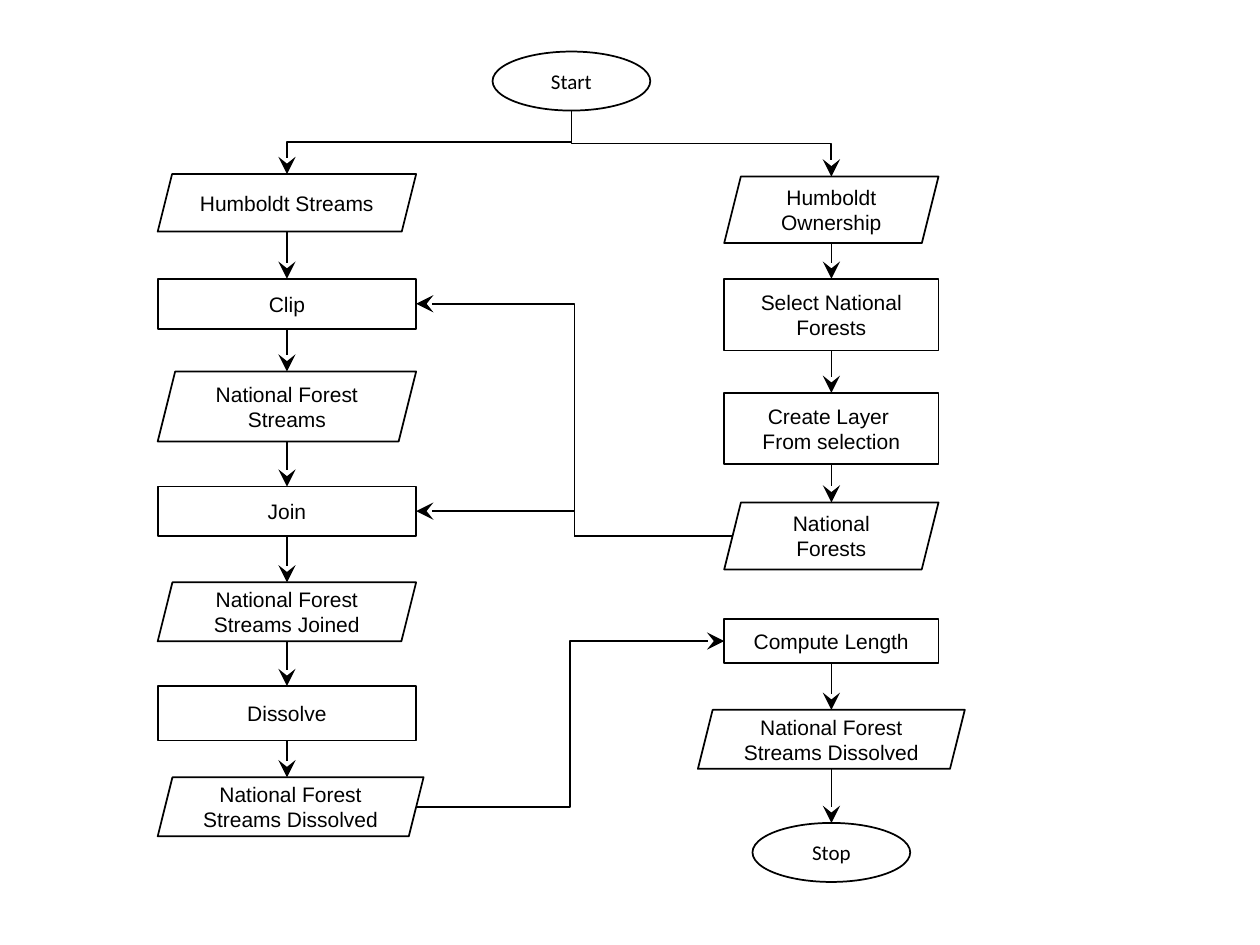
from dataclasses import dataclass

import pptx
import pptx.dml.color
import pptx.enum.shapes
import pptx.enum.text
import pptx.util
from lxml import etree
from pptx.oxml.ns import qn

Cm = pptx.util.Cm
Kind = pptx.enum.shapes.MSO_SHAPE
Link = pptx.enum.shapes.MSO_CONNECTOR
TOP, LEFT, BOTTOM = 0, 1, 2


@dataclass(frozen=True)
class Theme:
    ink: str = "000000"
    paper: str = "FFFFFF"
    font: str = "Arial"
    cap_font: str = "Calibri"
    size: int = 12
    line: int = 1


def tint(code):
    return pptx.dml.color.RGBColor.from_string(code)


def write(frame, text, *, font, size, color):
    """Fill a text frame with centred lines."""
    frame.word_wrap = True
    frame.vertical_anchor = pptx.enum.text.MSO_ANCHOR.MIDDLE
    frame.text = text
    for para in frame.paragraphs:
        para.alignment = pptx.enum.text.PP_ALIGN.CENTER
        para.font.name = font
        para.font.size = pptx.util.Pt(size)
        para.font.color.rgb = tint(color)


def middle(shape, side):
    """Point at the middle of a side; slanted sides sit inside the frame."""
    if side in (TOP, BOTTOM):
        down = shape.height if side == BOTTOM else 0
        return shape.left + shape.width // 2, shape.top + down
    slant = shape.height // 8 if shape.auto_shape_type == Kind.PARALLELOGRAM else 0
    across = slant if side == LEFT else shape.width - slant
    return shape.left + across, shape.top + shape.height // 2


class Chart:
    def __init__(self, slide, theme):
        self.slide = slide
        self.theme = theme

    def box(self, kind, text, left, top, width, height):
        look = self.theme
        shape = self.slide.shapes.add_shape(
            kind, Cm(left), Cm(top), Cm(width), Cm(height))
        shape.shadow.inherit = False
        shape.fill.solid()
        shape.fill.fore_color.rgb = tint(look.paper)
        shape.line.color.rgb = tint(look.ink)
        shape.line.width = pptx.util.Pt(look.line)
        font = look.cap_font if kind == Kind.OVAL else look.font
        write(shape.text_frame, text, font=font, size=look.size, color=look.ink)
        return shape

    def arrow(self, kind, start, end):
        wire = self.slide.shapes.add_connector(kind, *start, *end)
        wire.line.color.rgb = tint(self.theme.ink)
        wire.line.width = pptx.util.Pt(self.theme.line)
        tail = etree.SubElement(wire.line._get_or_add_ln(), qn("a:tailEnd"))
        tail.set("type", "stealth")
        tail.set("w", "lg")
        tail.set("len", "lg")
        etree.SubElement(wire.element.spPr, qn("a:effectLst"))
        return wire

    def drop(self, upper, lower):
        """Straight arrow from one step down to the next."""
        x, y = middle(upper, BOTTOM)
        wire = self.arrow(Link.STRAIGHT, (x, y), (x, lower.top))
        if upper.auto_shape_type == Kind.RECTANGLE:
            wire.begin_connect(upper, BOTTOM)
        if lower.auto_shape_type == Kind.RECTANGLE:
            wire.end_connect(lower, TOP)

    def bend(self, start, end):
        """Elbow that leaves and arrives level."""
        self.arrow(Link.ELBOW, start, end)

    def fork(self, start, end):
        """Elbow that leaves and arrives upright: a level one, turned."""
        (x1, y1), (x2, y2) = start, end
        x, y = (x1 + x2) // 2, (y1 + y2) // 2
        sign = 1 if x2 > x1 else -1
        half, reach = sign * (y2 - y1) // 2, abs(x2 - x1) // 2
        wire = self.arrow(Link.ELBOW, (x + half, y - reach), (x - half, y + reach))
        turn = 270 if sign > 0 else 90
        wire.element.spPr.find(qn("a:xfrm")).set("rot", str(turn * 60000))


def main():
    deck = pptx.Presentation()
    deck.slide_width, deck.slide_height = Cm(25.4), Cm(19.05)
    chart = Chart(deck.slides.add_slide(deck.slide_layouts[6]), Theme())
    data, task, cap = Kind.PARALLELOGRAM, Kind.RECTANGLE, Kind.OVAL

    # Steps: kind, text, top, width, height
    left_steps = [
        (data, "Humboldt Streams", 3.51, 5.21, 1.16),
        (task, "Clip", 5.62, 5.21, 1.01),
        (data, "National Forest Streams", 7.49, 5.21, 1.41),
        (task, "Join", 9.81, 5.21, 0.99),
        (data, "National Forest Streams Joined", 11.74, 5.21, 1.19),
        (task, "Dissolve", 13.83, 5.21, 1.1),
        (data, "National Forest Streams Dissolved", 15.67, 5.36, 1.19),
    ]
    right_steps = [
        (data, "Humboldt Ownership", 3.56, 4.32, 1.34),
        (task, "Select National Forests", 5.62, 4.32, 1.45),
        (task, "Create Layer \nFrom selection", 7.92, 4.32, 1.43),
        (data, "National Forests", 10.13, 4.32, 1.35),
        (task, "Compute Length", 12.48, 4.32, 0.89),
        (data, "National Forest Streams Dissolved", 14.31, 5.38, 1.19),
        (cap, "Stop", 16.59, 3.18, 1.19),
    ]
    edge, axis = 3.18, 16.76

    # Boxes: left column shares an edge, right column a centre
    start = chart.box(cap, "Start", 9.93, 1.04, 3.18, 1.19)
    west = [chart.box(kind, text, edge, top, wide, high)
            for kind, text, top, wide, high in left_steps]
    east = [chart.box(kind, text, axis - wide / 2, top, wide, high)
            for kind, text, top, wide, high in right_steps]

    # Arrows down each run of steps
    for run in (west, east[:4], east[4:]):
        for upper, lower in zip(run, run[1:]):
            chart.drop(upper, lower)

    # Start splits to both columns
    for head in (west[0], east[0]):
        chart.fork(middle(start, BOTTOM), middle(head, TOP))

    # Links between the columns
    right = 3
    forests, length = east[3], east[4]
    for step in (west[1], west[3]):
        chart.bend(middle(forests, LEFT), middle(step, right))
    chart.bend(middle(west[-1], right), middle(length, LEFT))

    deck.save("out.pptx")


if __name__ == "__main__":
    main()
